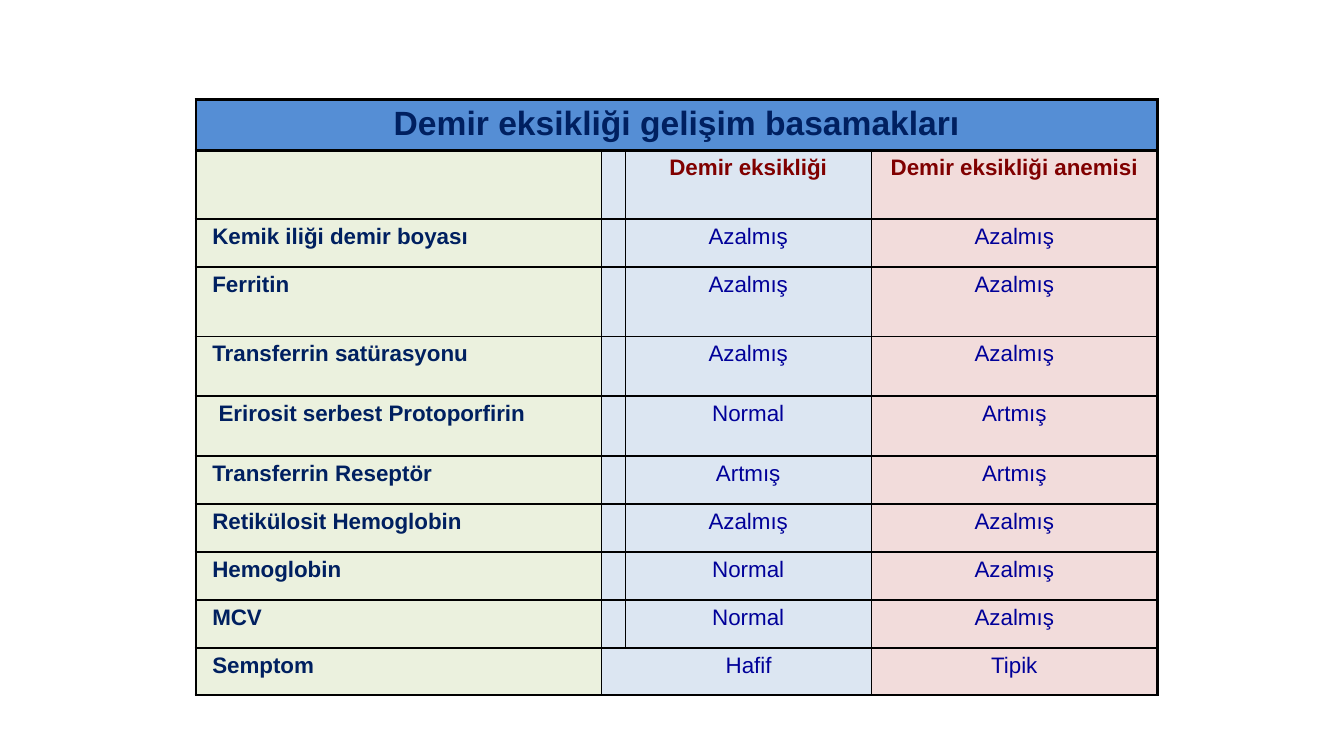
from dataclasses import dataclass

from lxml import etree
from pptx import Presentation
from pptx.dml.color import RGBColor
from pptx.enum.text import PP_ALIGN
from pptx.oxml.ns import qn
from pptx.util import Cm, Pt

LEFT, CENTER = PP_ALIGN.LEFT, PP_ALIGN.CENTER


@dataclass(frozen=True)
class Theme:
    font: str = "Arial"
    title_size: float = 24
    body_size: float = 16
    navy: str = "002060"
    maroon: str = "800000"
    blue: str = "000099"
    border: str = "000000"
    title_fill: str = "558ED5"
    column_fills: tuple = ("EBF1DE", "DCE6F2", "DCE6F2", "F2DCDB")
    thin: float = 1
    thick: float = 2.25


theme = Theme()

TITLE = "Demir eksikliği gelişim basamakları"
HEADINGS = ("", "", "Demir eksikliği", "Demir eksikliği anemisi")
FINDINGS = (
    ("Kemik iliği demir boyası", "Azalmış", "Azalmış"),
    ("Ferritin", "Azalmış", "Azalmış"),
    ("Transferrin satürasyonu", "Azalmış", "Azalmış"),
    ("Erirosit serbest Protoporfirin", "Normal", "Artmış"),
    ("Transferrin Reseptör", "Artmış", "Artmış"),
    ("Retikülosit Hemoglobin", "Azalmış", "Azalmış"),
    ("Hemoglobin", "Normal", "Azalmış"),
    ("MCV", "Normal", "Azalmış"),
    ("Semptom", "Hafif", "Tipik"),
)
COLUMN_WIDTHS = (10.21, 0.6, 6.2, 7.21)
ROW_HEIGHTS = (1.28, 1.73, 1.21, 1.74, 1.51, 1.51, 1.21, 1.21, 1.21, 1.21, 1.18)
LAST_ROW, LAST_COLUMN = len(ROW_HEIGHTS) - 1, len(COLUMN_WIDTHS) - 1


def write(cell, text, color, size=theme.body_size, bold=False, align=CENTER, indent=0.25):
    cell.margin_left = Cm(indent)
    paragraph = cell.text_frame.paragraphs[0]
    paragraph.text = text
    paragraph.alignment = align
    font = paragraph.runs[0].font
    font.name, font.size, font.bold = theme.font, Pt(size), bold
    font.color.rgb = RGBColor.from_string(color)


def set_borders(cell, weights):
    """Draw the left, right, top and bottom borders with the given point weights."""
    properties = cell._tc.get_or_add_tcPr()
    for position, (side, weight) in enumerate(zip("LRTB", weights)):
        line = etree.Element(qn(f"a:ln{side}"), w=str(Pt(weight)))
        fill = etree.SubElement(line, qn("a:solidFill"))
        etree.SubElement(fill, qn("a:srgbClr"), val=theme.border)
        properties.insert(position, line)


presentation = Presentation()
presentation.slide_width, presentation.slide_height = Cm(33.87), Cm(19.05)
slide = presentation.slides.add_slide(presentation.slide_layouts[6])

table = slide.shapes.add_table(
    len(ROW_HEIGHTS), len(COLUMN_WIDTHS), Cm(4.94), Cm(2.51),
    Cm(sum(COLUMN_WIDTHS)), Cm(sum(ROW_HEIGHTS)),
).table
table.first_row = table.horz_banding = False
for column, width in zip(table.columns, COLUMN_WIDTHS):
    column.width = Cm(width)
for row, height in zip(table.rows, ROW_HEIGHTS):
    row.height = Cm(height)

# Fills and borders: heavy frame around the table and the title row
for row in range(LAST_ROW + 1):
    for column, column_fill in enumerate(theme.column_fills):
        cell = table.cell(row, column)
        cell.fill.solid()
        cell.fill.fore_color.rgb = RGBColor.from_string(
            theme.title_fill if row == 0 else column_fill)
        heavy_sides = (
            row == 0 or column == 0,
            row == 0 or column == LAST_COLUMN,
            row <= 1,
            row in (0, LAST_ROW),
        )
        set_borders(cell, [theme.thick if heavy else theme.thin for heavy in heavy_sides])

table.cell(0, 0).merge(table.cell(0, LAST_COLUMN))
table.cell(LAST_ROW, 1).merge(table.cell(LAST_ROW, 2))

# Wording
write(table.cell(0, 0), TITLE, theme.navy, size=theme.title_size, bold=True)
for column, heading in enumerate(HEADINGS):
    if heading:
        write(table.cell(1, column), heading, theme.maroon, bold=True)
for row, (label, deficiency, anemia) in enumerate(FINDINGS, start=2):
    is_last = row == LAST_ROW
    label_indent = 0.57 if label.startswith("Erirosit") else 0.41
    write(table.cell(row, 0), label, theme.navy, bold=True, align=LEFT, indent=label_indent)
    write(table.cell(row, 1 if is_last else 2), deficiency, theme.blue,
          indent=0.88 if is_last else 0.25)
    write(table.cell(row, 3), anemia, theme.blue)

presentation.save("out.pptx")
